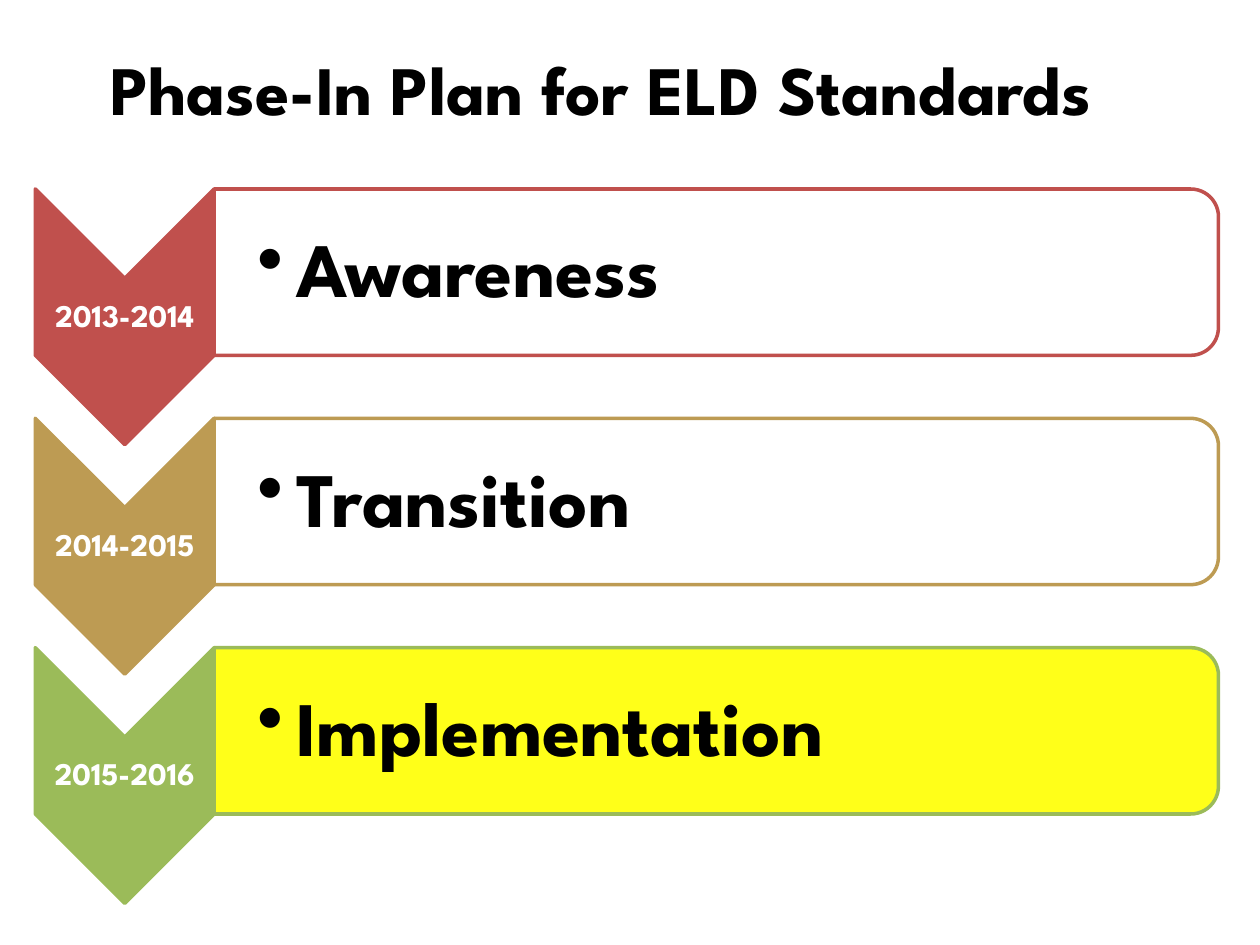
"""Build the three-year phase-in plan slide for the ELD standards."""
import pptx
import pptx.util
from pptx.dml.color import RGBColor
from pptx.enum.shapes import MSO_SHAPE
from pptx.enum.text import MSO_ANCHOR, PP_ALIGN
from pptx.oxml.ns import qn
from lxml import etree

Inches, Pt = pptx.util.Inches, pptx.util.Pt

TITLE = "Phase-In Plan for ELD Standards"
PHASES = [
    {"years": "2013-2014", "stage": "Awareness", "accent": "C0504D", "panel": "FFFFFF", "opacity": 90},
    {"years": "2014-2015", "stage": "Transition", "accent": "BD9B53", "panel": "FFFFFF", "opacity": 100},
    {"years": "2015-2016", "stage": "Implementation", "accent": "9BBB59", "panel": "FFFF00", "opacity": 90},
]
THEME = {
    "font": "League Spartan",
    "dark": "000000",
    "light": "FFFFFF",
    "title": 39.6,
    "years": 18,
    "stage": 44,
    "line": 2,
}
FIRST_TOP, PITCH = 1.5, 1.82
CHEVRON_LEFT, CHEVRON_WIDTH, CHEVRON_HEIGHT = 0.28, 1.42, 2.03
PANEL_LEFT, PANEL_WIDTH, PANEL_HEIGHT = 1.7, 7.97, 1.32


def add_run(paragraph, text, size, color):
    run = paragraph.add_run()
    run.text = text
    run.font.name = THEME["font"]
    run.font.size = Pt(size)
    run.font.bold = True
    run.font.color.rgb = RGBColor.from_string(color)


def add_turned_shape(slide, preset, left, top, width, height, fill, line):
    """Add a shape turned 90 degrees that covers the given visible box."""
    shape = slide.shapes.add_shape(
        preset,
        Inches(left + (width - height) / 2),
        Inches(top + (height - width) / 2),
        Inches(height),
        Inches(width),
    )
    shape.rotation = 90
    shape.shadow.inherit = False
    shape.fill.solid()
    shape.fill.fore_color.rgb = RGBColor.from_string(fill)
    shape.line.color.rgb = RGBColor.from_string(line)
    shape.line.width = Pt(THEME["line"])
    return shape


def set_opacity(shape, percent):
    color = shape.fill._xPr.find(qn("a:solidFill"))[0]
    etree.SubElement(color, qn("a:alpha")).set("val", str(percent * 1000))


def add_label(slide, left, top, width, height, inset, left_inset):
    frame = slide.shapes.add_textbox(
        Inches(left), Inches(top), Inches(width), Inches(height)
    ).text_frame
    frame.word_wrap = True
    frame.vertical_anchor = MSO_ANCHOR.MIDDLE
    frame.margin_top = frame.margin_right = frame.margin_bottom = Inches(inset)
    frame.margin_left = Inches(left_inset)
    paragraph = frame.paragraphs[0]
    paragraph.line_spacing = 0.9
    return paragraph


def add_bullet(paragraph, indent):
    paragraph.level = 1
    properties = paragraph._p.get_or_add_pPr()
    properties.set("marL", str(Inches(indent)))
    properties.set("indent", str(-Inches(indent)))
    etree.SubElement(properties, qn("a:buChar")).set("char", "•")


def add_title(slide):
    title = slide.shapes.title
    title.left, title.top = Inches(0.19), Inches(0.33)
    title.width, title.height = Inches(9.47), Inches(0.73)
    frame = title.text_frame
    frame.word_wrap = True
    frame.vertical_anchor = MSO_ANCHOR.MIDDLE
    frame.margin_right = Inches(0.41)
    frame.paragraphs[0].alignment = PP_ALIGN.CENTER
    add_run(frame.paragraphs[0], TITLE, THEME["title"], THEME["dark"])


def add_phase(slide, top, phase):
    accent = phase["accent"]
    add_turned_shape(slide, MSO_SHAPE.CHEVRON, CHEVRON_LEFT, top,
                     CHEVRON_WIDTH, CHEVRON_HEIGHT, accent, accent)
    years = add_label(slide, CHEVRON_LEFT, top + CHEVRON_WIDTH / 2,
                      CHEVRON_WIDTH, 0.61, 0.01, 0.01)
    years.alignment = PP_ALIGN.CENTER
    add_run(years, phase["years"], THEME["years"], THEME["light"])

    panel = add_turned_shape(slide, MSO_SHAPE.ROUND_2_SAME_RECTANGLE, PANEL_LEFT, top,
                             PANEL_WIDTH, PANEL_HEIGHT, phase["panel"], accent)
    if phase["opacity"] < 100:
        set_opacity(panel, phase["opacity"])
    stage = add_label(slide, PANEL_LEFT, top + 0.07, 7.91, 1.19, 0.03, 0.34)
    add_bullet(stage, 0.31)
    add_run(stage, phase["stage"], THEME["stage"], THEME["dark"])


def main():
    deck = pptx.Presentation()
    deck.slide_width, deck.slide_height = Inches(10), Inches(7.5)
    slide = deck.slides.add_slide(deck.slide_layouts[5])
    add_title(slide)
    for row, phase in enumerate(PHASES):
        add_phase(slide, FIRST_TOP + row * PITCH, phase)
    deck.save("out.pptx")


if __name__ == "__main__":
    main()
